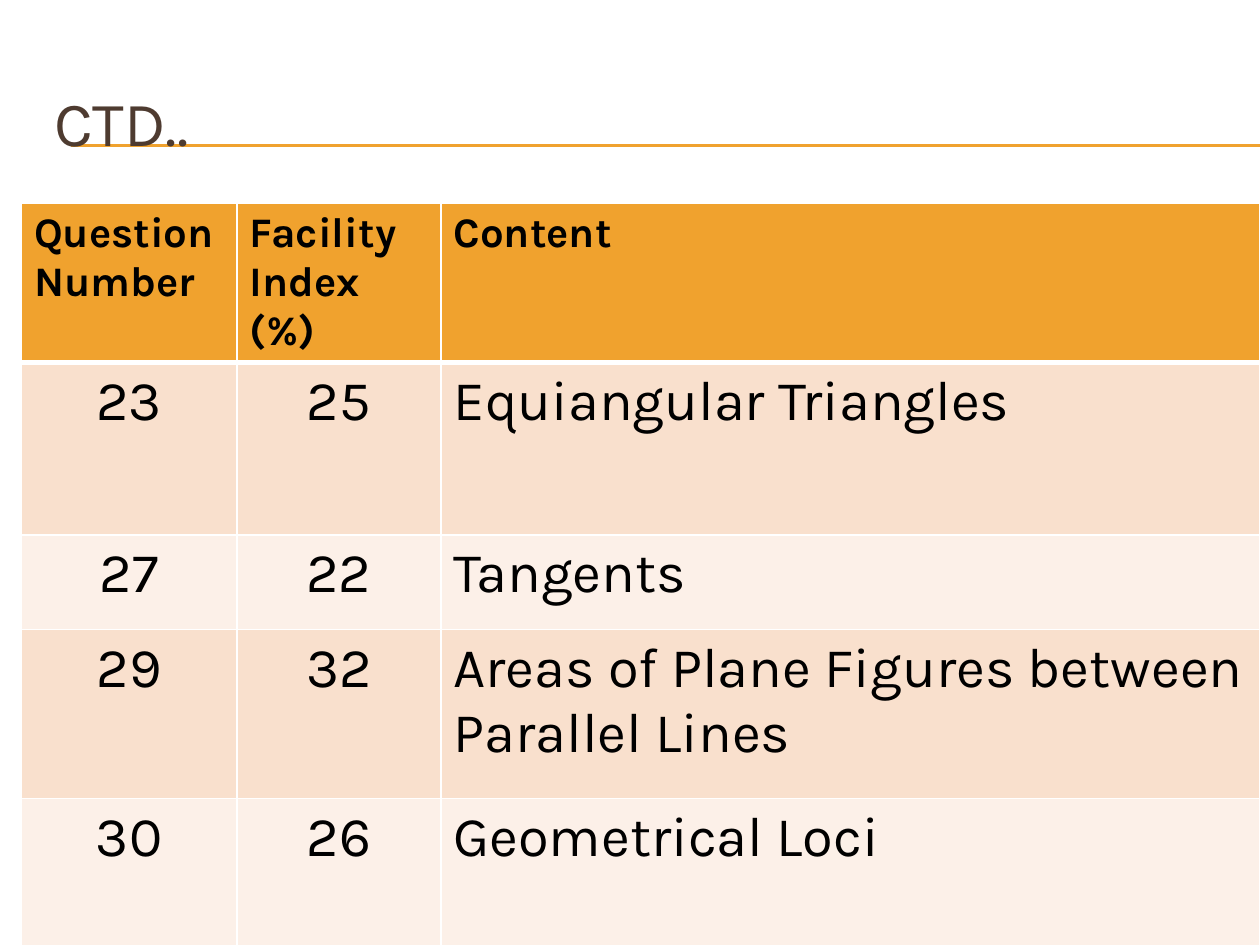
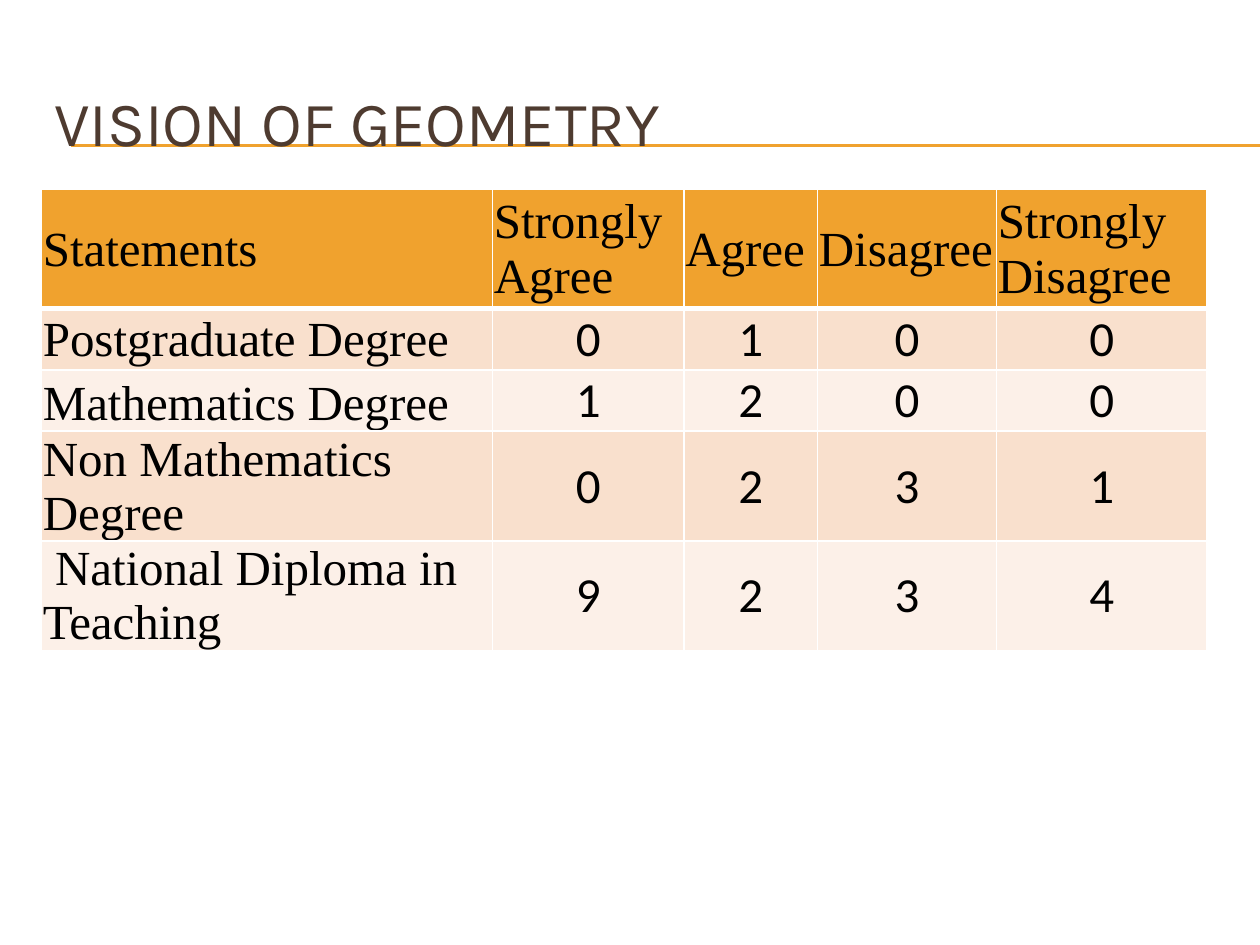
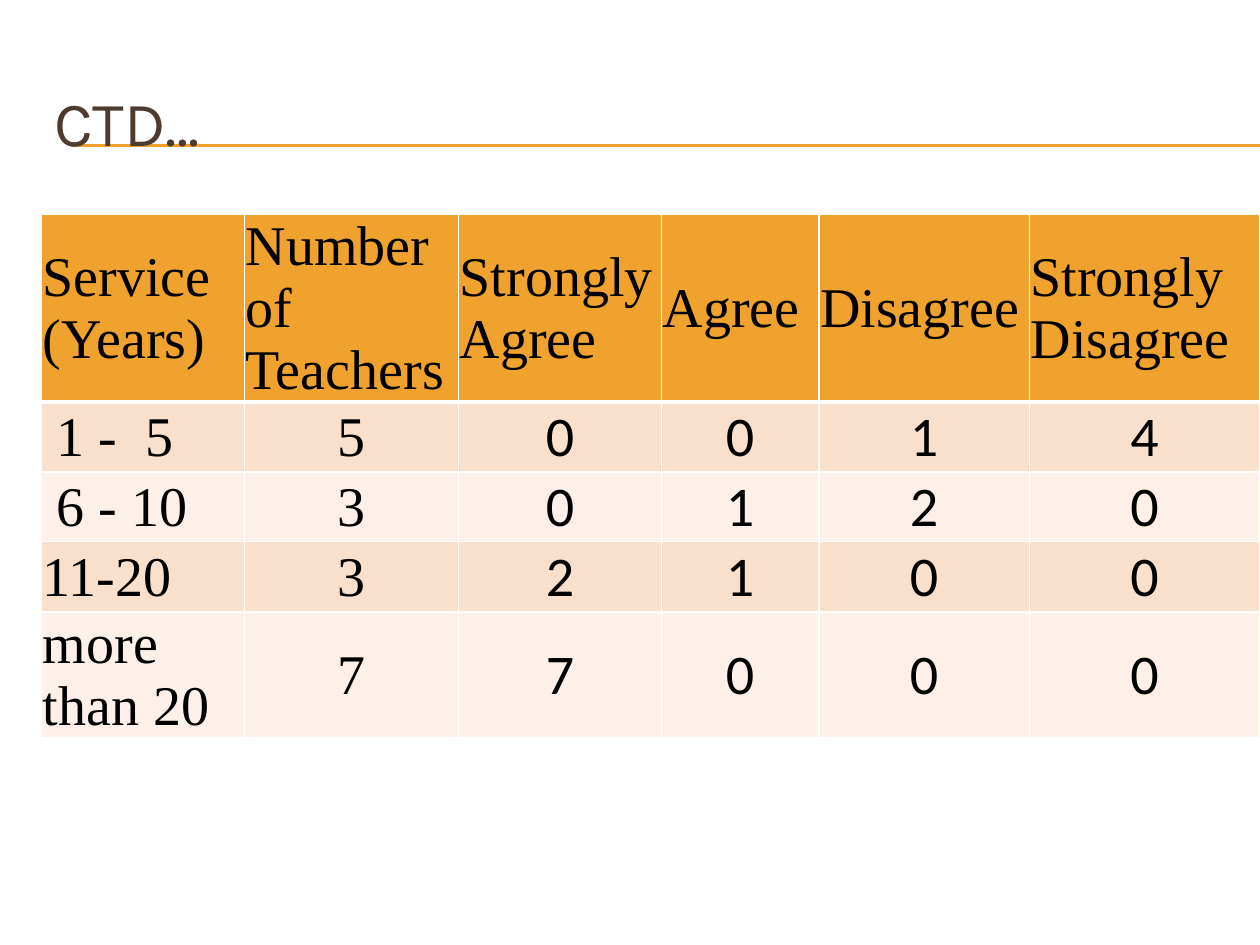
from lxml import etree
from pptx import Presentation
from pptx.dml.color import RGBColor
from pptx.enum.shapes import MSO_CONNECTOR
from pptx.enum.text import MSO_ANCHOR, MSO_AUTO_SIZE, PP_ALIGN
from pptx.oxml.ns import qn
from pptx.util import Inches, Pt

STRAIGHT = MSO_CONNECTOR.STRAIGHT
TOP, MIDDLE, BOTTOM = MSO_ANCHOR.TOP, MSO_ANCHOR.MIDDLE, MSO_ANCHOR.BOTTOM
LEFT, CENTER = PP_ALIGN.LEFT, PP_ALIGN.CENTER
NO_AUTOFIT = MSO_AUTO_SIZE.NONE

# Shared look
AMBER, BROWN, BLACK, WHITE = "F0A22E", "4E3B30", "000000", "FFFFFF"
BANDS = ("F9E0CD", "FCF0E8")
SANS, SERIF, DIGITS = "Karla", "Times New Roman", "Calibri"
TITLE_BOX = (0.33, 0.5, 9.5, 0.92)
RULE_LEFT, RULE_RIGHT, RULE_TOPS = 0.56, 10, (1.15, 1.16)
TITLE_ONLY = 5
THIN, THICK = 1, 3
TIGHT_MARGINS = {"margin_left": 0.01, "margin_top": 0.01,
                 "margin_right": 0.01, "margin_bottom": 0}


def color(hex_code):
    return RGBColor.from_string(hex_code)


def write(text_frame, text, font, size, ink=BLACK, bold=False, align=LEFT):
    paragraph = text_frame.paragraphs[0]
    paragraph.alignment = align
    run = paragraph.add_run()
    run.text = text
    for name, value in {"name": font, "size": Pt(size), "bold": bold}.items():
        setattr(run.font, name, value)
    run.font.color.rgb = color(ink)


def add_titled_slide(presentation, title_text):
    """Title with the double amber rule behind it."""
    slide = presentation.slides.add_slide(presentation.slide_layouts[TITLE_ONLY])
    title = slide.shapes.title
    for name, value in zip(("left", "top", "width", "height"), TITLE_BOX):
        setattr(title, name, Inches(value))
    frame_format = {"vertical_anchor": MIDDLE, "word_wrap": True,
                    "auto_size": NO_AUTOFIT}
    for name, value in frame_format.items():
        setattr(title.text_frame, name, value)
    write(title.text_frame, title_text, SANS, 36, BROWN)

    for top in RULE_TOPS:
        rule = slide.shapes.add_connector(
            STRAIGHT, Inches(RULE_LEFT), Inches(top), Inches(RULE_RIGHT), Inches(top))
        rule.line.color.rgb = color(AMBER)
        rule.line.width = Pt(0.75)
        etree.SubElement(rule.element.spPr, qn("a:effectLst"))
        title.element.addprevious(rule.element)
    return slide


def set_borders(cell, top, bottom):
    """White borders; they must come before the fill in the cell properties."""
    properties = cell._tc.get_or_add_tcPr()
    widths = {"a:lnL": THIN, "a:lnR": THIN, "a:lnT": top, "a:lnB": bottom}
    for tag, width in widths.items():
        line = etree.SubElement(properties, qn(tag), w=str(Pt(width)))
        fill = etree.SubElement(line, qn("a:solidFill"))
        etree.SubElement(fill, qn("a:srgbClr"), val=WHITE)


def add_banded_table(slide, left, top, widths, heights, rows, cell_style):
    """cell_style(row, column) gives the write() options, anchor and margins."""
    frame = slide.shapes.add_table(
        len(rows), len(widths), Inches(left), Inches(top),
        Inches(sum(widths)), Inches(sum(heights)))
    table = frame.table
    for column, width in zip(table.columns, widths):
        column.width = Inches(width)
    for table_row, height in zip(table.rows, heights):
        table_row.height = Inches(height)

    for r, values in enumerate(rows):
        for c, text in enumerate(values):
            cell = table.cell(r, c)
            text_format, anchor, margins = cell_style(r, c)
            set_borders(cell, THICK if r == 1 else THIN, THICK if r == 0 else THIN)
            cell.fill.solid()
            cell.fill.fore_color.rgb = color(BANDS[(r - 1) % 2] if r else AMBER)
            cell.vertical_anchor = anchor
            for name, value in margins.items():
                setattr(cell, name, Inches(value))
            write(cell.text_frame, text, **text_format)


def question_style(row, column):
    text_format = {"font": SANS, "size": 32 if row else 24, "bold": row == 0,
                   "align": CENTER if row and column < 2 else LEFT}
    return text_format, TOP, {}


def survey_style(size, label_columns, bottom_rows=()):
    """Serif headings and labels, centred answer counts."""
    def style(row, column):
        is_answer = row > 0 and column >= label_columns
        text_format = {"font": DIGITS if is_answer else SERIF, "size": size,
                       "align": CENTER if row and column else LEFT}
        anchor = BOTTOM if column == 0 and row in bottom_rows else MIDDLE
        return text_format, anchor, TIGHT_MARGINS
    return style


def build_questions(presentation):
    slide = add_titled_slide(presentation, "CTD..")
    rows = [
        ("Question Number", "Facility Index (%)", "Content"),
        ("23", "25", "Equiangular Triangles"),
        ("27", "22", "Tangents"),
        ("29", "32", "Areas of Plane Figures between Parallel Lines"),
        ("30", "26", "Geometrical Loci"),
    ]
    add_banded_table(slide, 0.17, 1.61, (1.71, 1.62, 6.5),
                     (1.25, 1.37, 0.75, 1.34, 1.18), rows, question_style)


def build_qualifications(presentation):
    slide = add_titled_slide(presentation, "VISION OF GEOMETRY")
    rows = [
        ("Statements", "Strongly Agree", "Agree", "Disagree", "Strongly Disagree"),
        ("Postgraduate Degree", "0", "1", "0", "0"),
        ("Mathematics Degree", "1", "2", "0", "0"),
        ("Non Mathematics Degree", "0", "2", "3", "1"),
        (" National Diploma in Teaching", "9", "2", "3", "4"),
    ]
    add_banded_table(slide, 0.33, 1.5, (3.58, 1.52, 1.06, 1.42, 1.67),
                     (0.95, 0.48, 0.48, 0.87, 0.87), rows,
                     survey_style(28, label_columns=1, bottom_rows=(2, 3, 4)))


def build_service(presentation):
    slide = add_titled_slide(presentation, "CTD…")
    rows = [
        ("Service (Years)", "Number of Teachers", "Strongly Agree", "Agree",
         "Disagree", "Strongly Disagree"),
        (" 1 -  5", "5", "0", "0", "1", "4"),
        (" 6 - 10", "3", "0", "1", "2", "0"),
        ("11-20", "3", "2", "1", "0", "0"),
        ("more than 20", "7", "7", "0", "0", "0"),
    ]
    add_banded_table(slide, 0.33, 1.7, (1.61, 1.7, 1.61, 1.25, 1.67, 1.83),
                     (1.48, 0.55, 0.55, 0.56, 1), rows,
                     survey_style(32, label_columns=2))


def main():
    presentation = Presentation()
    presentation.slide_width = Inches(10)
    presentation.slide_height = Inches(7.5)
    for build in (build_questions, build_qualifications, build_service):
        build(presentation)
    presentation.save("out.pptx")


if __name__ == "__main__":
    main()
